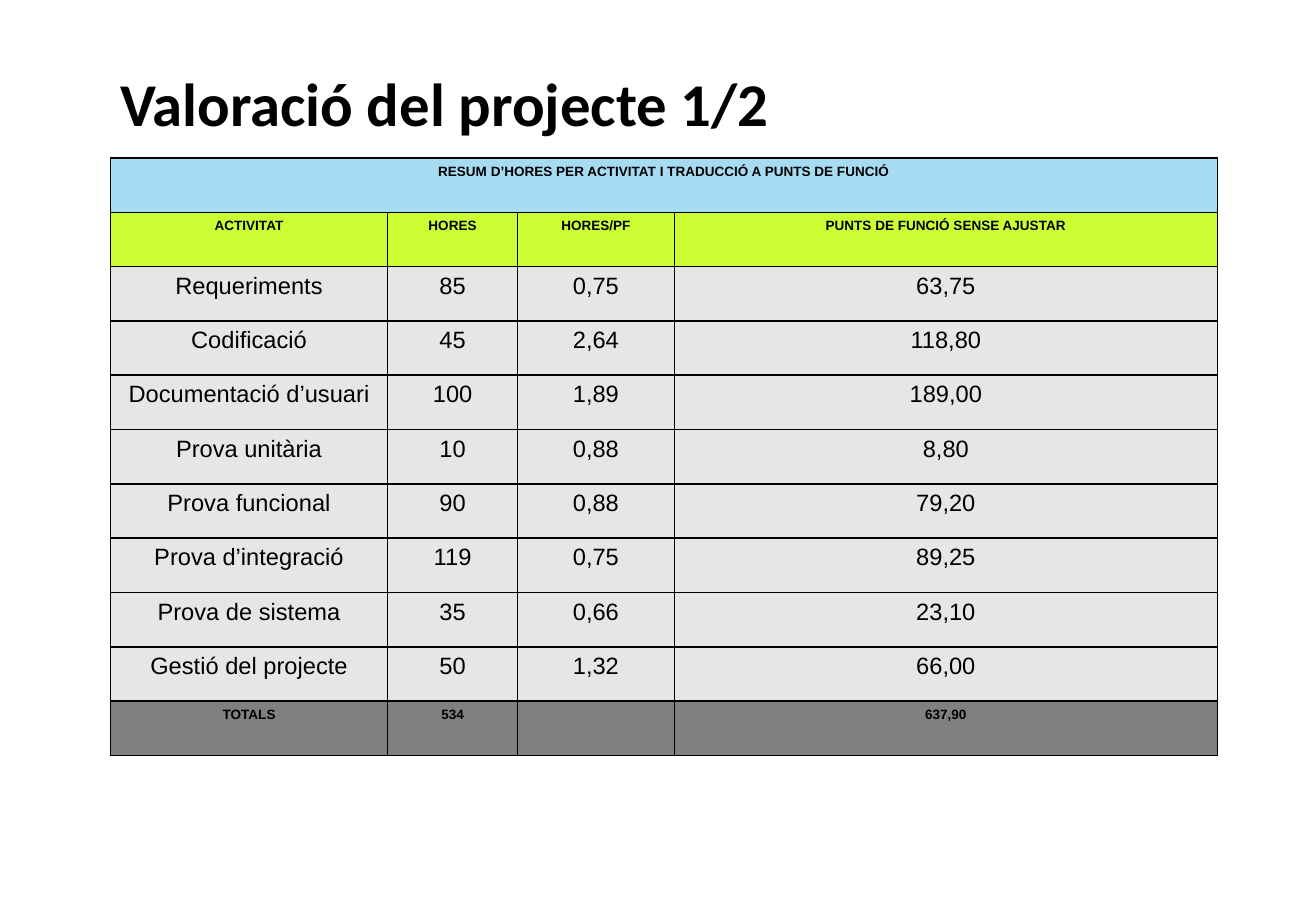
from lxml.etree import SubElement
from pptx import Presentation
from pptx.dml.color import RGBColor
from pptx.enum.text import PP_ALIGN
from pptx.oxml.ns import qn
from pptx.util import Inches, Pt

TITLE = "Valoració del projecte 1/2"
BANNER = ("RESUM D’HORES PER ACTIVITAT I TRADUCCIÓ A PUNTS DE FUNCIÓ", "", "", "")
HEADS = ("ACTIVITAT", "HORES", "HORES/PF", "PUNTS DE FUNCIÓ SENSE AJUSTAR")
TASKS = [
    ("Requeriments", "85", "0,75", "63,75"),
    ("Codificació", "45", "2,64", "118,80"),
    ("Documentació d’usuari", "100", "1,89", "189,00"),
    ("Prova unitària", "10", "0,88", "8,80"),
    ("Prova funcional", "90", "0,88", "79,20"),
    ("Prova d’integració", "119", "0,75", "89,25"),
    ("Prova de sistema", "35", "0,66", "23,10"),
    ("Gestió del projecte", "50", "1,32", "66,00"),
]
TOTALS = ("TOTALS", "534", "", "637,90")
WIDTHS = (2.28, 1.07, 1.29, 4.47)
LEFT, TOP, HIGH = 0.91, 1.3, 4.92
BLACK = "000000"


def color(code):
    return RGBColor.from_string(code)


def write(frame, text, size=14, font="Arial", bold=False, align=PP_ALIGN.CENTER):
    par = frame.paragraphs[0]
    par.alignment = align
    par.font.size = Pt(size)
    if text:
        run = par.add_run()
        run.text = text
        run.font.size = Pt(size)
        run.font.name = font
        run.font.bold = bold
        run.font.color.rgb = color(BLACK)


def paint(cell, fill):
    props = cell._tc.get_or_add_tcPr()
    for side in ("lnL", "lnR", "lnT", "lnB"):
        line = SubElement(props, qn(f"a:{side}"), w=str(Pt(1)))
        solid = SubElement(line, qn("a:solidFill"))
        SubElement(solid, qn("a:srgbClr"), val=BLACK)
    cell.fill.solid()
    cell.fill.fore_color.rgb = color(fill)


def main():
    deck = Presentation()
    deck.slide_width, deck.slide_height = Inches(10.83), Inches(7.5)
    slide = deck.slides.add_slide(deck.slide_layouts[6])

    box = slide.shapes.add_textbox(Inches(0.89), Inches(0.47), Inches(9.17), Inches(0.83))
    box.text_frame.word_wrap = True
    box.text_frame.margin_top = Inches(0.07)
    write(box.text_frame, TITLE, size=36, font="Calibri", bold=True, align=PP_ALIGN.LEFT)

    rows = [(BANNER, "A6DCF2", 8), (HEADS, "CCFF33", 8)]
    rows += [(task, "E6E6E6", 14) for task in TASKS]
    rows.append((TOTALS, "808080", 8))

    table = slide.shapes.add_table(
        len(rows), len(WIDTHS), Inches(LEFT), Inches(TOP), Inches(sum(WIDTHS)), Inches(HIGH)
    ).table
    for col, width in zip(table.columns, WIDTHS):
        col.width = Inches(width)
    for row, (texts, fill, size) in zip(table.rows, rows):
        row.height = Inches(HIGH / len(rows))
        for cell, text in zip(row.cells, texts):
            paint(cell, fill)
            write(cell.text_frame, text, size=size, bold=size == 8)
    table.cell(0, 0).merge(table.cell(0, len(WIDTHS) - 1))

    deck.save("out.pptx")


if __name__ == "__main__":
    main()
